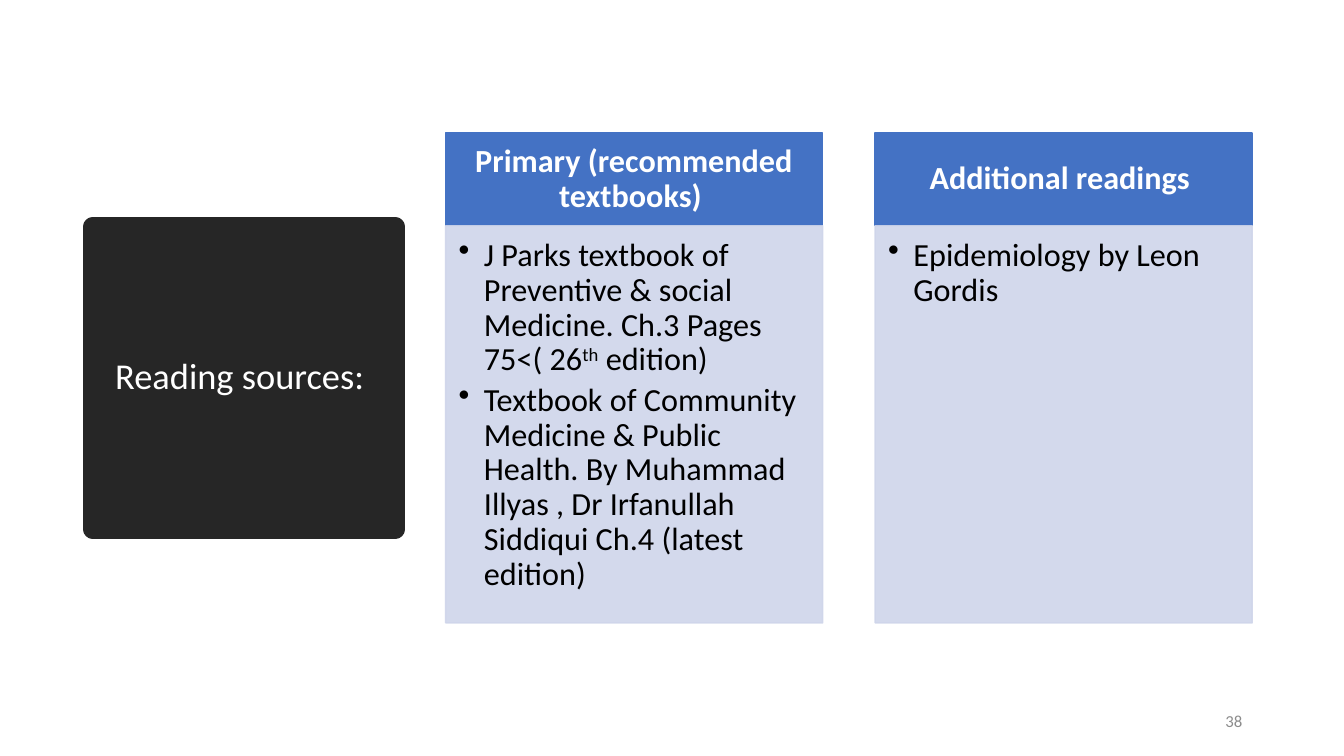
from pptx import Presentation
from pptx.dml.color import RGBColor
from pptx.enum.shapes import MSO_SHAPE as Preset
from pptx.enum.text import MSO_ANCHOR as Anchor, MSO_AUTO_SIZE as AutoSize, PP_ALIGN as Align
from pptx.oxml.ns import qn
from pptx.oxml.xmlchemy import OxmlElement
from pptx.util import Inches, Pt

WHITE = RGBColor(0xFF, 0xFF, 0xFF)
BLACK = RGBColor(0x00, 0x00, 0x00)
CHARCOAL = RGBColor(0x26, 0x26, 0x26)
BLUE = RGBColor(0x44, 0x72, 0xC4)
PALE_BLUE = RGBColor(0xCF, 0xD5, 0xEA)
GRAY = RGBColor(0x8C, 0x8C, 0x8C)

READINGS = [
    ("Primary (recommended textbooks) ", [
        [("J Parks textbook of Preventive & social Medicine. Ch.3 Pages 75<( 26", False),
         ("th", True), (" edition)", False)],
        [("Textbook of Community Medicine & Public Health. By Muhammad Illyas , "
          "Dr Irfanullah Siddiqui Ch.4 (latest edition)", False)],
    ]),
    ("Additional readings ", [[("Epidemiology by Leon Gordis", False)]]),
]
COLUMN_LEFT, COLUMN_STEP, COLUMN_WIDTH = 4.42, 4.26, 3.74
HEADING_TOP, HEADING_HEIGHT, BODY_HEIGHT = 1.32, 0.92, 3.94


class ReadingSlide:
    """Hold the font and the current slide, and add its elements."""

    font_name = "Calibri"

    def __init__(self, presentation):
        self.slide = presentation.slides.add_slide(presentation.slide_layouts[5])

    def place(self, shape, box):
        for name, value in zip(("left", "top", "width", "height"), box):
            setattr(shape, name, Inches(value))

    def paint(self, shape, color, line_width):
        shape.fill.solid()
        shape.fill.fore_color.rgb = color
        shape.line.color.rgb = color
        shape.line.width = Pt(line_width)

    def frame(self, shape, anchor, insets=(0.1, 0.05, 0.1, 0.05)):
        settings = {"word_wrap": True, "auto_size": AutoSize.NONE, "vertical_anchor": anchor}
        sides = ("margin_left", "margin_top", "margin_right", "margin_bottom")
        settings.update(zip(sides, map(Inches, insets)))
        for name, value in settings.items():
            setattr(shape.text_frame, name, value)
        return shape.text_frame

    def add_text(self, paragraph, runs, size, color, bold=False, **layout):
        for name, value in layout.items():
            setattr(paragraph, name, value)
        for text, raised in runs:
            run = paragraph.add_run()
            run.text = text
            settings = {"name": self.font_name, "size": Pt(size), "bold": bold}
            for name, value in settings.items():
                setattr(run.font, name, value)
            run.font.color.rgb = color
            if raised:
                run._r.get_or_add_rPr().set("baseline", "30000")

    def panel(self, box, color, opacity=100):
        shape = self.slide.shapes.add_shape(Preset.RECTANGLE, *map(Inches, box))
        shape.shadow.inherit = False
        self.paint(shape, color, 1)
        if opacity < 100:
            for color_element in shape._element.spPr.iter(qn("a:srgbClr")):
                alpha = OxmlElement("a:alpha")
                alpha.set("val", str(opacity * 1000))
                color_element.append(alpha)
        return shape

    def title(self, text, box):
        shape = self.slide.shapes.title
        self.place(shape, box)
        self.paint(shape, CHARCOAL, 13.75)
        paragraph = self.frame(shape, Anchor.MIDDLE).paragraphs[0]
        self.add_text(paragraph, [(text, False)], 26, WHITE,
                      alignment=Align.CENTER, line_spacing=0.9)

    def heading(self, text, box):
        frame = self.frame(self.panel(box, BLUE), Anchor.MIDDLE, (0.18, 0.1, 0.18, 0.1))
        self.add_text(frame.paragraphs[0], [(text, False)], 23, WHITE, bold=True,
                      alignment=Align.CENTER, line_spacing=0.9)

    def bullets(self, items, box):
        frame = self.frame(self.panel(box, PALE_BLUE, 90), Anchor.TOP, (0.13, 0.13, 0.18, 0.2))
        for index, runs in enumerate(items):
            paragraph = frame.add_paragraph() if index else frame.paragraphs[0]
            self.add_text(paragraph, runs, 23, BLACK, alignment=Align.LEFT,
                          line_spacing=0.9, space_after=Pt(4))
            properties = paragraph._p.get_or_add_pPr()
            properties.set("marL", str(Inches(0.25)))
            properties.set("indent", str(Inches(-0.25)))
            bullet = OxmlElement("a:buChar")
            bullet.set("char", "•")
            properties.append(bullet)

    def page_number(self, text, box):
        shape = self.slide.shapes.add_textbox(*map(Inches, box))
        paragraph = self.frame(shape, Anchor.MIDDLE).paragraphs[0]
        self.add_text(paragraph, [(text, False)], 12, GRAY, alignment=Align.RIGHT)


def main():
    presentation = Presentation()
    presentation.slide_width = Inches(13.33)
    presentation.slide_height = Inches(7.5)
    page = ReadingSlide(presentation)
    page.title("Reading sources: ", (0.92, 2.25, 3, 3))
    for index, (heading, items) in enumerate(READINGS):
        left = COLUMN_LEFT + index * COLUMN_STEP
        page.heading(heading, (left, HEADING_TOP, COLUMN_WIDTH, HEADING_HEIGHT))
        page.bullets(items, (left, HEADING_TOP + HEADING_HEIGHT, COLUMN_WIDTH, BODY_HEIGHT))
    page.page_number("38", (9.42, 6.95, 3, 0.4))
    presentation.save("out.pptx")


if __name__ == "__main__":
    main()
